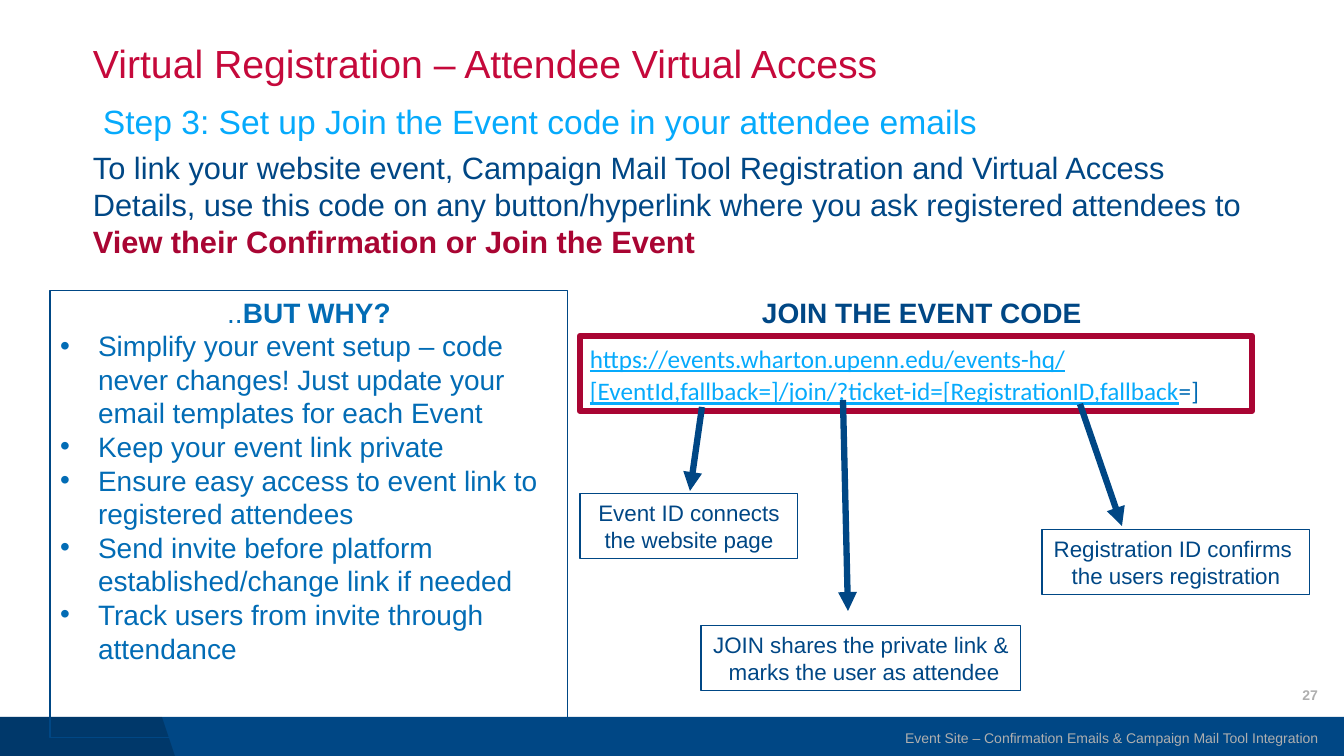
import dataclasses

import lxml.etree
import pptx
import pptx.dml.color
import pptx.enum.shapes
import pptx.enum.text
import pptx.oxml.ns
import pptx.util

SCALE = 914400 / 100.8
ALIGN = pptx.enum.text.PP_ALIGN
ANCHOR = pptx.enum.text.MSO_ANCHOR
SHAPES = pptx.enum.shapes


@dataclasses.dataclass(frozen=True)
class Theme:
    """Colours, fonts and type sizes of the slide."""
    navy: str = "004785"
    blue: str = "026CB5"
    sky: str = "06AAFC"
    red: str = "C5093B"
    crimson: str = "A90533"
    grey: str = "AFAFAF"
    black: str = "000000"
    sans: str = "Arial"
    code: str = "Calibri"
    title: int = 28
    step: int = 24
    lead: int = 22
    body: int = 20
    link: int = 18
    label: int = 16
    small: int = 10
    thin: float = 0.75
    thick: float = 4.5


THEME = Theme()


def px(length):
    """Turn pixels into EMU."""
    return pptx.util.Emu(round(length * SCALE))


def rgb(color):
    """Turn a hex string into a colour."""
    return pptx.dml.color.RGBColor.from_string(color)


def add_xml(parent, tag, **attributes):
    """Append a drawing element and return it."""
    return lxml.etree.SubElement(parent, pptx.oxml.ns.qn(tag), attributes)


def add_span(para, text, size, color, bold=False, underline=False, font=THEME.sans):
    """Add text to a paragraph, one run for each line."""
    for index, line in enumerate(text.split("\n")):
        if index:
            para.add_line_break()
        span = para.add_run()
        span.text = line
        span.font.name = font
        span.font.size = pptx.util.Pt(size)
        span.font.bold = bold
        span.font.underline = underline
        span.font.color.rgb = rgb(color)


def prepare_frame(shape, align=ALIGN.LEFT, anchor=ANCHOR.TOP, side=10, wrap=True):
    """Set up the text frame of a shape and return its first paragraph."""
    frame = shape.text_frame
    frame.word_wrap = wrap
    frame.vertical_anchor = anchor
    frame.margin_left = frame.margin_right = px(side)
    frame.margin_top = frame.margin_bottom = px(5)
    para = frame.paragraphs[0]
    para.alignment = align
    return para


def add_text(page, box, **options):
    """Add a text box and return its first paragraph."""
    return prepare_frame(page.shapes.add_textbox(*map(px, box)), **options)


def add_outline(page, box, color, width):
    """Add an unfilled rectangle."""
    shape = page.shapes.add_shape(SHAPES.MSO_SHAPE.RECTANGLE, *map(px, box))
    shape.shadow.inherit = False
    shape.fill.background()
    shape.line.color.rgb = rgb(color)
    shape.line.width = pptx.util.Pt(width)
    return shape


def add_footer(page, box):
    """Add the band with its shaded corner, the footer text and the page number."""
    left, top, width, height = box
    band = page.shapes.add_shape(SHAPES.MSO_SHAPE.RECTANGLE, *map(px, box))
    builder = page.shapes.build_freeform(px(left), px(top), scale=1.0)
    corners = [(162, 0), (175, height), (0, height)]
    builder.add_line_segments([(px(left + x), px(top + y)) for x, y in corners])
    corner = builder.convert_to_shape()
    for shape, color in ((band, THEME.navy), (corner, THEME.black)):
        shape.shadow.inherit = False
        shape.fill.solid()
        shape.fill.fore_color.rgb = rgb(color)
        shape.line.fill.background()
    fill = corner.fill._xPr.find(pptx.oxml.ns.qn("a:solidFill"))
    add_xml(fill[0], "a:alpha", val="20000")

    lines = [
        (1, "Event Site – Confirmation Emails & Campaign Mail Tool Integration", False),
        (-42, "27", True),
    ]
    for offset, text, bold in lines:
        para = add_text(page, (left + width - 470, top + offset, 454, 40),
                        align=ALIGN.RIGHT, anchor=ANCHOR.MIDDLE)
        add_span(para, text, THEME.small, THEME.grey, bold)


def add_header(page, box):
    """Add the title, the step line and the lead paragraph."""
    left, top, width, height = box
    para = add_text(page, (left, top, width, 53), side=0)
    para.line_spacing = 0.9
    add_span(para, "Virtual Registration – Attendee Virtual Access", THEME.title, THEME.red)

    para = add_text(page, (left, top + 56, width, 50))
    add_span(para, "Step 3: Set up Join the Event code in your attendee emails",
             THEME.step, THEME.sky)

    para = add_text(page, (left, top + 104, width, height - 104), side=0)
    para.space_after = pptx.util.Pt(2)
    add_span(para, "To link your website event, Campaign Mail Tool Registration and Virtual "
             "Access Details, use this code on any button/hyperlink where you ask "
             "registered attendees to ", THEME.lead, THEME.navy)
    add_span(para, "View their Confirmation or Join the Event", THEME.lead, THEME.crimson, True)


def add_reasons(page, box):
    """Add the outlined box with the bulleted reasons."""
    shape = add_outline(page, box, THEME.navy, THEME.thin)
    para = prepare_frame(shape, ALIGN.CENTER)
    add_span(para, "..", THEME.body, THEME.blue)
    add_span(para, "BUT WHY?", THEME.body, THEME.blue, True)
    reasons = [
        "Simplify your event setup – code never changes! Just update your email "
        "templates for each Event",
        "Keep your event link private",
        "Ensure easy access to event link to registered attendees",
        "Send invite before platform established/change link if needed",
        "Track users from invite through attendance",
    ]
    for reason in reasons:
        para = shape.text_frame.add_paragraph()
        para.alignment = ALIGN.LEFT
        properties = para._p.get_or_add_pPr()
        properties.set("marL", str(px(38)))
        properties.set("indent", str(-px(38)))
        add_xml(properties, "a:buFont", typeface=THEME.sans)
        add_xml(properties, "a:buChar", char="•")
        add_span(para, reason, THEME.body, THEME.blue)


def add_arrow(page, start, end):
    """Add a thick arrow between two points."""
    arrow = page.shapes.add_connector(SHAPES.MSO_CONNECTOR.STRAIGHT, *map(px, start + end))
    arrow.line.color.rgb = rgb(THEME.navy)
    arrow.line.width = pptx.util.Pt(THEME.thick)
    add_xml(arrow.line._get_or_add_ln(), "a:tailEnd", type="triangle")
    add_xml(arrow._element.spPr, "a:effectLst")


def add_code(page, box):
    """Add the code box with its heading, arrows and explanations."""
    left, top, width, height = box
    para = add_text(page, (left + 172, top, 343, 44))
    add_span(para, "JOIN THE EVENT CODE", THEME.body, THEME.navy, True)

    shape = add_outline(page, (left, top + 46, width, 75), THEME.crimson, THEME.thick)
    para = prepare_frame(shape)
    para.line_spacing = 1.07
    para.space_after = pptx.util.Pt(8)
    add_span(para, "https://events.wharton.upenn.edu/events-hq/[EventId,fallback=]/join/"
             "?ticket-id=[RegistrationID,fallback", THEME.link, THEME.sky,
             underline=True, font=THEME.code)
    add_span(para, "=]", THEME.link, THEME.blue, font=THEME.code)

    notes = [
        ("Event ID connects\nthe website page", (0, 204, 218), (122, 117), (110, 201)),
        ("JOIN shares the private link &\n marks the user as attendee",
         (121, 336, 320), (263, 110), (268, 321)),
        ("Registration ID confirms \nthe users registration",
         (462, 240, 268), (500, 114), (542, 236)),
    ]
    for text, (x, y, note_width), start, end in notes:
        add_arrow(page, (left + start[0], top + start[1]), (left + end[0], top + end[1]))
        shape = add_outline(page, (left + x, top + y, note_width, 65), THEME.navy, THEME.thin)
        para = prepare_frame(shape, ALIGN.CENTER, wrap=False)
        add_span(para, text, THEME.label, THEME.navy)


def main():
    """Build the slide and save it."""
    deck = pptx.Presentation()
    deck.slide_width, deck.slide_height = px(1344), px(756)
    page = deck.slides.add_slide(deck.slide_layouts[6])
    add_footer(page, (0, 717, 1344, 39))
    add_header(page, (93, 40, 1159, 230))
    add_reasons(page, (50, 290, 518, 448))
    add_code(page, (580, 290, 672, 401))
    deck.save("out.pptx")


if __name__ == "__main__":
    main()
